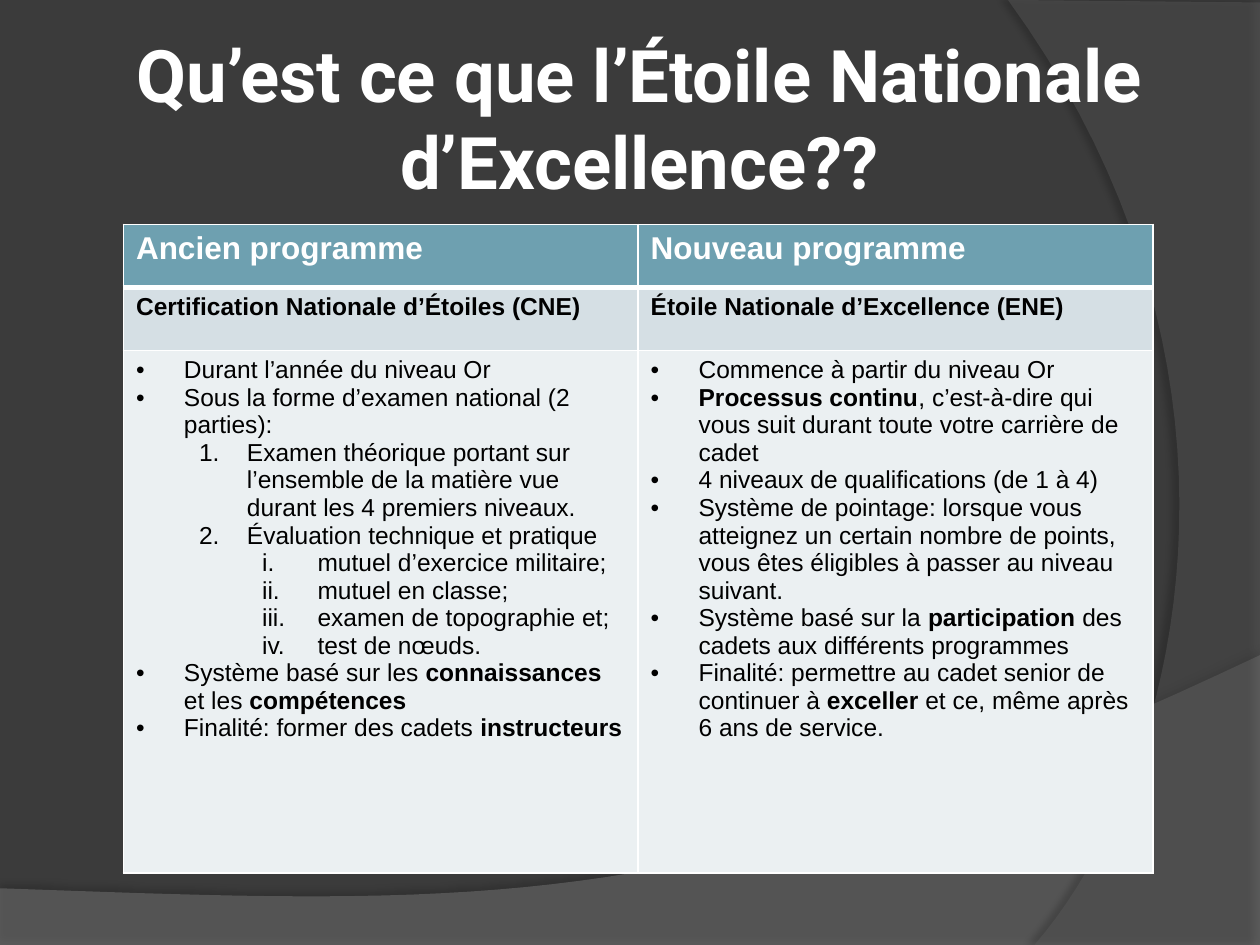
from lxml import etree
from pptx import Presentation
from pptx.dml.color import RGBColor
from pptx.enum.text import MSO_ANCHOR, PP_ALIGN
from pptx.oxml.ns import qn
from pptx.util import Inches, Pt

CENTER = PP_ALIGN.CENTER
MIDDLE = MSO_ANCHOR.MIDDLE
TITLE_ONLY = 5

COLORS = {
    "background": "3B3B3B", "wave": "7F7F7F", "arc": "5E5E5E",
    "white": "FFFFFF", "black": "000000",
    "header": "6EA0B0", "subheader": "D5DFE4", "body": "EBF0F2",
}
TITLE_FONT = {"name": "Roboto", "size": Pt(41.4), "bold": True}

# Row formats: height, fill, text colour, text size, top and bottom border
ROWS = [
    {"height": 0.5, "fill": "header", "color": "white", "size": 18, "top": 1, "bottom": 3},
    {"height": 0.5, "fill": "subheader", "color": "black", "size": 14, "top": 3, "bottom": 1},
    {"height": 4.15, "fill": "body", "color": "black", "size": 14, "top": 1, "bottom": 1},
]
# List levels: left margin, hanging indent, bullet tag and its attributes
LEVELS = [
    (0.38, 0.38, "a:buChar", {"char": "•"}),
    (0.88, 0.38, "a:buAutoNum", {"type": "arabicPeriod"}),
    (1.44, 0.44, "a:buAutoNum", {"type": "romanLcPeriod"}),
]
# Each cell is a list of (level, text); level None has no bullet, ** marks bold
CONTENT = [
    [[(None, "**Ancien programme**")], [(None, "**Nouveau programme**")]],
    [[(None, "**Certification Nationale d’Étoiles (CNE)**")],
     [(None, "**Étoile Nationale d’Excellence (ENE)**")]],
    [[
        (0, "Durant l’année du niveau Or"),
        (0, "Sous la forme d’examen national (2 parties):"),
        (1, "Examen théorique portant sur l’ensemble de la matière vue "
            "durant les 4 premiers niveaux."),
        (1, "Évaluation technique et pratique"),
        (2, "mutuel d’exercice militaire;"),
        (2, "mutuel en classe;"),
        (2, "examen de topographie et;"),
        (2, "test de nœuds."),
        (0, "Système basé sur les **connaissances** et les **compétences**"),
        (0, "Finalité: former des cadets **instructeurs**"),
    ], [
        (0, "Commence à partir du niveau Or"),
        (0, "**Processus continu**, c’est-à-dire qui vous suit durant toute "
            "votre carrière de cadet"),
        (0, "4 niveaux de qualifications (de 1 à 4)"),
        (0, "Système de pointage: lorsque vous atteignez un certain nombre de "
            "points, vous êtes éligibles à passer au niveau suivant."),
        (0, "Système basé sur la **participation** des cadets aux différents programmes"),
        (0, "Finalité: permettre au cadet senior de continuer à **exceller** "
            "et ce, même après 6 ans de service."),
    ]],
]


def rgb(name):
    return RGBColor.from_string(COLORS[name])


def add_child(parent, tag, **attributes):
    return etree.SubElement(parent, qn(tag), {k: str(v) for k, v in attributes.items()})


def set_font(font, formats, color):
    for key, value in formats.items():
        setattr(font, key, value)
    font.color.rgb = rgb(color)


def bezier(start, control_1, control_2, end, steps=40):
    """Points along a cubic curve, both ends included."""
    points = []
    for step in range(steps + 1):
        t = step / steps
        weights = ((1 - t) ** 3, 3 * t * (1 - t) ** 2, 3 * t * t * (1 - t), t ** 3)
        corners = (start, control_1, control_2, end)
        points.append(tuple(sum(w * c[axis] for w, c in zip(weights, corners))
                            for axis in (0, 1)))
    return points


def add_band(slide, points, color, opacity, shadow_opacity, distance, direction):
    """Translucent background outline with a soft shadow."""
    points = [(Inches(x), Inches(y)) for x, y in points]
    builder = slide.shapes.build_freeform(*points[0])
    builder.add_line_segments(points[1:], close=True)
    shape = builder.convert_to_shape()
    shape.line.fill.background()
    shape.fill.solid()
    shape.fill.fore_color.rgb = rgb(color)
    properties = shape.element.spPr
    add_child(properties.find(".//" + qn("a:srgbClr")), "a:alpha", val=opacity * 1000)
    shape.shadow.inherit = False
    shadow = add_child(properties.find(qn("a:effectLst")), "a:outerShdw",
                       blurRad=Pt(4), dist=Pt(distance), dir=direction * 60000,
                       algn="ctr", rotWithShape=0)
    shadow_color = add_child(shadow, "a:srgbClr", val=COLORS["black"])
    add_child(shadow_color, "a:alpha", val=shadow_opacity * 1000)


def add_background(slide, width, height):
    slide.background.fill.solid()
    slide.background.fill.fore_color.rgb = rgb("background")
    # Wave along the bottom
    wave = [(0, height), (width, height)]
    wave += bezier((width, 5.2), (5.59, 7.29), (3.91, 7.19), (0, 7.05))
    add_band(slide, wave, "wave", 45, 35, 3.5, 270)
    # Arc on the right
    arc = [(width, 0.02), (width, height)]
    arc += bezier((8.21, height), (9.35, 6.19), (10.18, 3), (8, 0))
    add_band(slide, arc, "arc", 40, 45, 4, 180)


def place_title(slide, left, top, width, height):
    title = slide.shapes.title
    title.left, title.top = Inches(left), Inches(top)
    title.width, title.height = Inches(width), Inches(height)
    frame = title.text_frame
    frame.text = "Qu’est ce que l’Étoile Nationale d’Excellence??"
    frame.word_wrap = True
    frame.vertical_anchor = MIDDLE
    for side in ("left", "top", "right", "bottom"):
        setattr(frame, "margin_" + side, Inches(0.05))
    paragraph = frame.paragraphs[0]
    paragraph.alignment = CENTER
    set_font(paragraph.runs[0].font, TITLE_FONT, "white")
    # Bring the title in front of the background bands
    title.element.getparent().append(title.element)


def set_bullet(paragraph, level):
    margin, hanging, tag, attributes = LEVELS[level]
    paragraph.level = level
    properties = paragraph._p.get_or_add_pPr()
    properties.set("marL", str(Inches(margin)))
    properties.set("indent", str(-Inches(hanging)))
    add_child(properties, "a:buFont", typeface="Arial")
    add_child(properties, tag, **attributes)


def fill_cell(cell, items, row):
    properties = cell._tc.get_or_add_tcPr()
    borders = {"L": 1, "R": 1, "T": row["top"], "B": row["bottom"]}
    for side, points in borders.items():
        line = add_child(properties, "a:ln" + side, w=Pt(points))
        add_child(add_child(line, "a:solidFill"), "a:srgbClr", val=COLORS["white"])
    cell.fill.solid()
    cell.fill.fore_color.rgb = rgb(row["fill"])
    frame = cell.text_frame
    for index, (level, text) in enumerate(items):
        paragraph = frame.add_paragraph() if index else frame.paragraphs[0]
        if level is not None:
            set_bullet(paragraph, level)
        for position, part in enumerate(text.split("**")):
            if part:
                run = paragraph.add_run()
                run.text = part
                formats = {"name": "Arial", "size": Pt(row["size"]),
                           "bold": position % 2 == 1}
                set_font(run.font, formats, row["color"])


def add_comparison(slide, left, top, width, height):
    columns = len(CONTENT[0])
    table = slide.shapes.add_table(len(ROWS), columns, Inches(left), Inches(top),
                                   Inches(width), Inches(height)).table
    table.first_row = table.horz_banding = False
    for row_index, row in enumerate(ROWS):
        table.rows[row_index].height = Inches(row["height"])
        for column, items in enumerate(CONTENT[row_index]):
            fill_cell(table.cell(row_index, column), items, row)


def main():
    presentation = Presentation()
    width, height = 10, 7.5
    presentation.slide_width, presentation.slide_height = Inches(width), Inches(height)
    slide = presentation.slides.add_slide(presentation.slide_layouts[TITLE_ONLY])
    add_background(slide, width, height)
    place_title(slide, 0.5, 0.3, 9.15, 1.25)
    add_comparison(slide, 0.98, 1.78, 8.17, 5.15)
    presentation.save("out.pptx")


if __name__ == "__main__":
    main()
